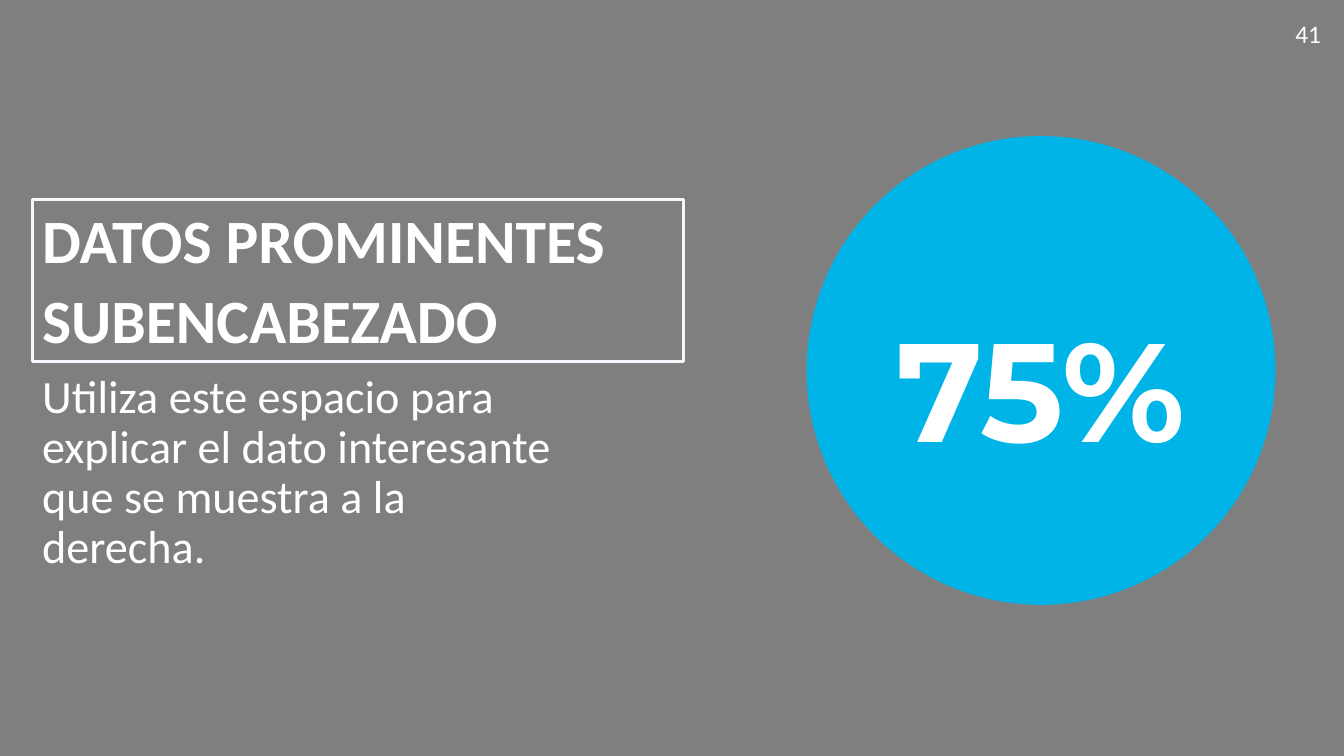
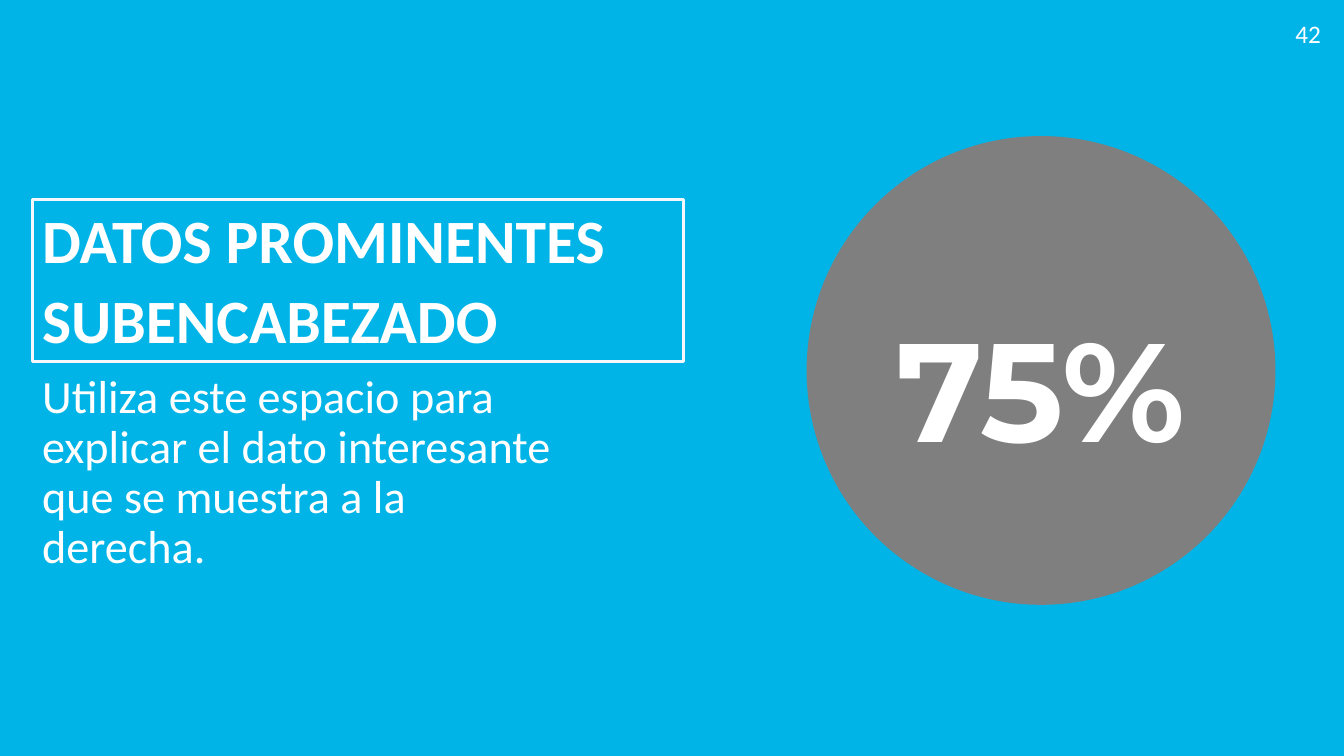
from pptx import Presentation
from pptx.dml.color import RGBColor
from pptx.enum.shapes import MSO_SHAPE as Shape
from pptx.enum.text import MSO_ANCHOR as Anchor, PP_ALIGN as Align
from pptx.util import Emu, Pt

GRAY = RGBColor(0x7F, 0x7F, 0x7F)
BLUE = RGBColor(0x01, 0xB4, 0xE7)
WHITE = RGBColor(0xFF, 0xFF, 0xFF)
FRAME = RGBColor(0xF5, 0xF7, 0xFC)
BODY_FONT = "Calibri"
FIGURE_FONT = "Montserrat"

TITLE = ["DATOS PROMINENTES", "SUBENCABEZADO"]
BODY = ["Utiliza este espacio para explicar el dato interesante "
        "que se muestra a la derecha."]
SLIDES = [
    {"number": "41", "figure": "75%", "background": GRAY, "circle": BLUE},
    {"number": "42", "figure": "75%", "background": BLUE, "circle": GRAY},
]

PX = 9144  # EMU per px, 100 px to the inch
WIDTH, HEIGHT = 1333, 750
LEFT = 32
CIRCLE_LEFT, CIRCLE_TOP, DIAMETER = 800, 135, 465


def px(*lengths):
    return [Emu(n * PX) for n in lengths]


def add_filled(s, kind, box, color):
    sp = s.shapes.add_shape(kind, *px(*box))
    sp.shadow.inherit = False
    sp.fill.solid()
    sp.fill.fore_color.rgb = color
    sp.line.fill.background()


def add_text(s, box, lines, size, font=BODY_FONT, bold=False,
             align=Align.LEFT, anchor=Anchor.TOP, spacing=1.0, gap=0):
    """Add a white text box, one paragraph a line, gap points between them."""
    sp = s.shapes.add_textbox(*px(*box))
    tf = sp.text_frame
    tf.word_wrap = True
    tf.vertical_anchor = anchor
    for i, line in enumerate(lines):
        p = tf.add_paragraph() if i else tf.paragraphs[0]
        p.alignment = align
        p.line_spacing = spacing
        p.space_before = Pt(gap if i else 0)
        r = p.add_run()
        r.text = line
        r.font.size = Pt(size)
        r.font.name = font
        r.font.bold = bold
        r.font.color.rgb = WHITE
    return sp


def add_fact_slide(prs, fact):
    s = prs.slides.add_slide(prs.slide_layouts[6])
    add_filled(s, Shape.RECTANGLE, (0, 0, WIDTH, HEIGHT), fact["background"])
    add_text(s, (LEFT, 366, 545, 216), BODY, 33, spacing=0.9)
    title = add_text(s, (LEFT, 198, 646, 161), TITLE, 44, bold=True,
                     anchor=Anchor.BOTTOM, spacing=0.9, gap=10)
    title.line.color.rgb = FRAME
    title.line.width = Pt(2)
    add_text(s, (1274, 13, 46, 40), [fact["number"]], 18, align=Align.RIGHT)
    add_filled(s, Shape.OVAL, (CIRCLE_LEFT, CIRCLE_TOP, DIAMETER, DIAMETER),
               fact["circle"])
    add_text(s, (CIRCLE_LEFT, 295, DIAMETER, 178), [fact["figure"]], 100,
             font=FIGURE_FONT, bold=True, align=Align.CENTER)


def main():
    prs = Presentation()
    prs.slide_width, prs.slide_height = px(WIDTH, HEIGHT)
    for fact in SLIDES:
        add_fact_slide(prs, fact)
    prs.save("out.pptx")


if __name__ == "__main__":
    main()
